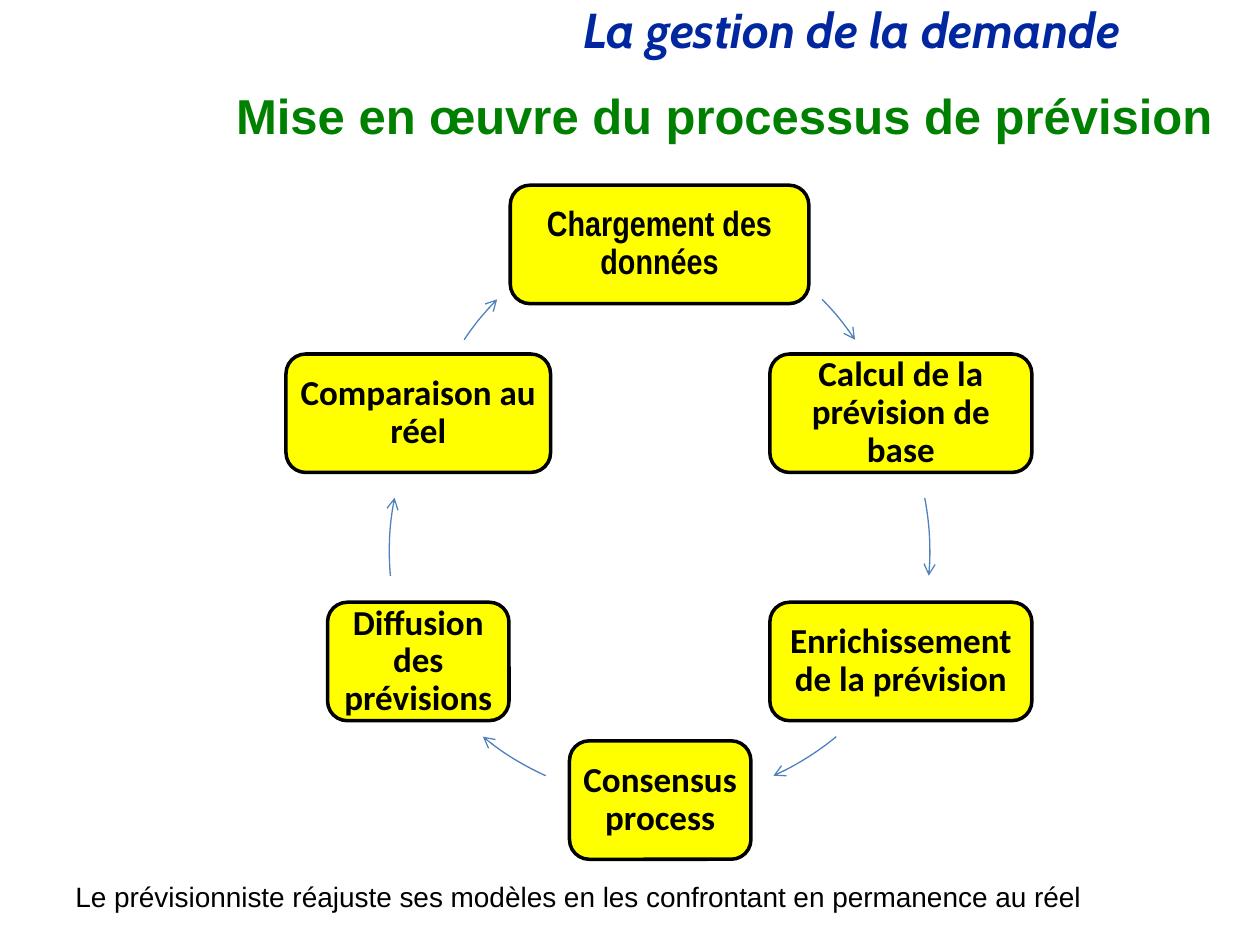
from math import atan2, degrees

from lxml import etree
from pptx import Presentation
from pptx.dml.color import RGBColor
from pptx.enum.shapes import MSO_SHAPE as Shape
from pptx.enum.text import MSO_ANCHOR as Anchor, PP_ALIGN as Align
from pptx.oxml.ns import qn
from pptx.util import Inches, Pt

COLORS = {
    "header": "00279F",
    "title": "008000",
    "text": "000000",
    "step": "FFFF00",
    "border": "000000",
    "arrow": "4F81BD",
}

HEADER = "La gestion de la demande"
TITLE = "Mise en œuvre du processus de prévision"
NOTE = "Le prévisionniste réajuste ses modèles en les confrontant en permanence au réel"

STEP_HEIGHT = 0.94
STEP_INSET = 0.05
STEPS = [
    ("Chargement des données", "Arial Narrow", 4.05, 1.47, 2.37),
    ("Calcul de la prévision de base", "Calibri", 6.11, 2.81, 2.08),
    ("Enrichissement de la prévision", "Calibri", 6.11, 4.78, 2.08),
    ("Consensus process", "Calibri", 4.52, 5.88, 1.44),
    ("Diffusion des prévisions", "Calibri", 2.6, 4.78, 1.44),
    ("Comparaison au réel", "Calibri", 2.27, 2.81, 2.1),
]

CIRCLE = 4.41
ARROWS = [
    ((2.75, 1.72), (6.52, 2.38), (6.78, 2.7)),
    ((2.97, 2.17), (7.35, 3.95), (7.38, 4.57)),
    ((3.03, 1.94), (6.64, 5.85), (6.14, 6.16)),
    ((3.03, 1.94), (4.33, 6.16), (3.83, 5.85)),
    ((3.09, 2.17), (3.1, 4.57), (3.13, 3.95)),
    ((3.31, 1.72), (3.69, 2.7), (3.95, 2.38)),
]


def color(name):
    return RGBColor.from_string(COLORS[name])


def write(shape, text, font_name, size, color_name, bold=True, italic=False,
          align=Align.LEFT, line_spacing=0.9, wrap=True):
    shape.text_frame.word_wrap = wrap
    paragraph = shape.text_frame.paragraphs[0]
    paragraph.text = text
    paragraph.alignment = align
    paragraph.line_spacing = line_spacing
    font = paragraph.font
    font.name, font.size, font.bold, font.italic = font_name, Pt(size), bold, italic
    font.color.rgb = color(color_name)


def add_text(slide, box, *args, **options):
    write(slide.shapes.add_textbox(*map(Inches, box)), *args, **options)


def add_step(slide, text, font_name, left, top, width):
    box = map(Inches, (left, top, width, STEP_HEIGHT))
    shape = slide.shapes.add_shape(Shape.ROUNDED_RECTANGLE, *box)
    shape.shadow.inherit = False
    shape.fill.solid()
    shape.fill.fore_color.rgb = color("step")
    shape.line.color.rgb = color("border")
    shape.line.width = Pt(2)
    frame = shape.text_frame
    frame.margin_left = frame.margin_right = Inches(STEP_INSET)
    frame.margin_top = frame.margin_bottom = Inches(STEP_INSET)
    frame.vertical_anchor = Anchor.MIDDLE
    write(shape, text, font_name, 20, "text", align=Align.CENTER)


def add_arrow(slide, corner, start, end):
    shape = slide.shapes.add_shape(Shape.ARC, *map(Inches, (*corner, CIRCLE, CIRCLE)))
    center_x, center_y = (value + CIRCLE / 2 for value in corner)
    for index, (x, y) in enumerate((start, end)):
        angle = degrees(atan2(y - center_y, x - center_x)) % 360
        shape.adjustments[index] = angle * 60000 / 100000
    shape.shadow.inherit = False
    shape.fill.background()
    shape.line.color.rgb = color("arrow")
    shape.line.width = Pt(0.75)
    line = shape.element.spPr.find(qn("a:ln"))
    etree.SubElement(line, qn("a:tailEnd"), type="arrow")


def main():
    presentation = Presentation()
    presentation.slide_width, presentation.slide_height = Inches(10), Inches(7.5)
    slide = presentation.slides.add_slide(presentation.slide_layouts[6])

    add_text(slide, (4.53, 0, 5.24, 0.53), HEADER, "Cabin", 28, "header",
             italic=True, wrap=False)
    add_text(slide, (0.98, 0.68, 8.74, 0.7), TITLE, "Arial", 28, "title",
             align=Align.RIGHT)
    for step, arrow in zip(STEPS, ARROWS):
        add_step(slide, *step)
        add_arrow(slide, *arrow)
    add_text(slide, (0.5, 6.93, 8.9, 0.37), NOTE, "Arial", 16, "text",
             bold=False, line_spacing=1.0)

    presentation.save("out.pptx")


if __name__ == "__main__":
    main()
